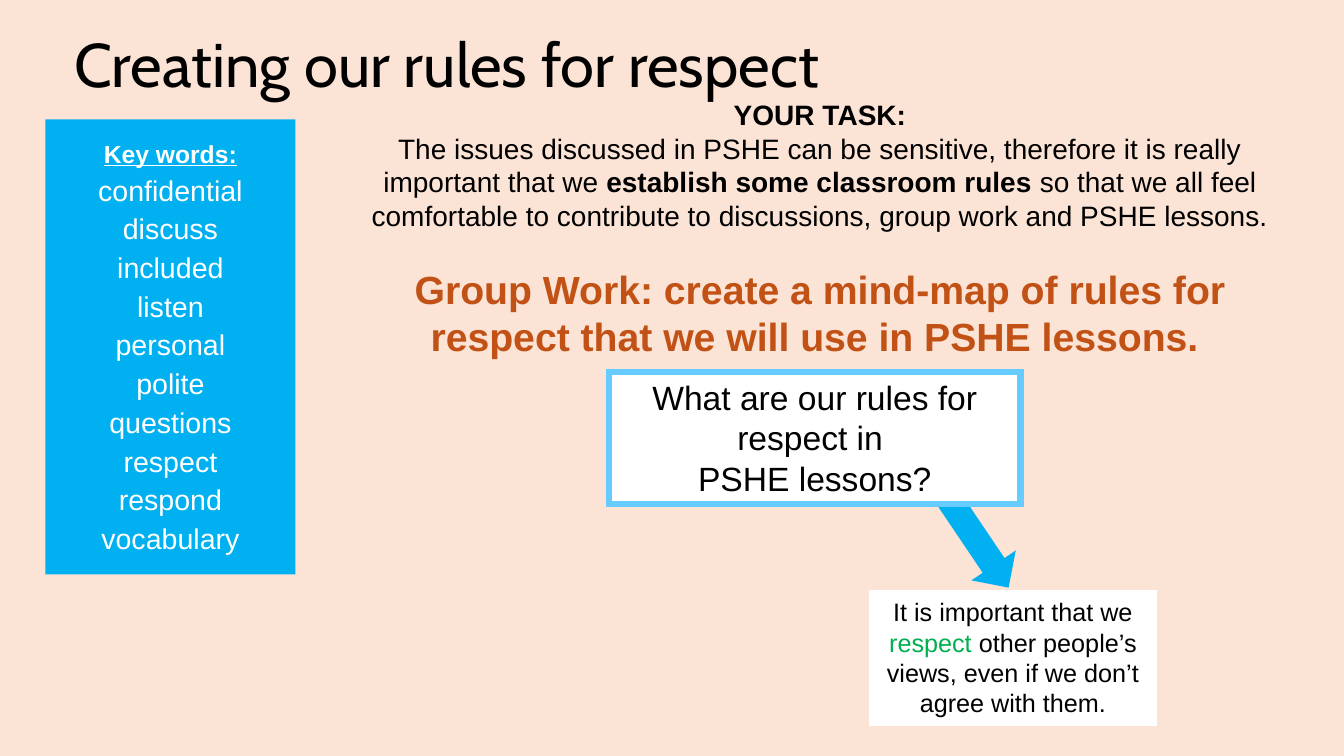
from dataclasses import dataclass

from lxml.etree import SubElement
from pptx import Presentation
from pptx.dml.color import RGBColor as Rgb
from pptx.enum.shapes import MSO_SHAPE as Preset
from pptx.enum.text import MSO_ANCHOR as Anchor, PP_ALIGN as Align
from pptx.oxml.ns import qn
from pptx.shapes.autoshape import Shape
from pptx.slide import Slide
from pptx.text.text import TextFrame
from pptx.util import Pt


@dataclass(frozen=True)
class Theme:
    body_font: str = "Arial"
    title_font: str = "Cabin"
    background: str = "FBE3D6"
    ink: str = "000000"
    paper: str = "FFFFFF"
    blue: str = "00B0F0"
    frame: str = "66CCFF"
    green: str = "00B050"
    orange: str = "C25115"
    title: float = 44
    group_work: float = 28
    prompt: float = 24
    keyword: float = 20.4
    task: float = 20
    answer: float = 18
    heading: float = 17.6


THEME = Theme()


@dataclass(frozen=True)
class Box:
    left: float
    top: float
    width: float
    height: float

    def lengths(self) -> tuple[Pt, Pt, Pt, Pt]:
        return Pt(self.left), Pt(self.top), Pt(self.width), Pt(self.height)


@dataclass(frozen=True)
class Run:
    text: str
    size: float
    color: str = THEME.ink
    bold: bool = False
    underline: bool = False
    font: str = THEME.body_font


@dataclass(frozen=True)
class Line:
    runs: tuple[Run, ...]
    before: float = 0
    spacing: float = 1.0
    align: Align = Align.CENTER


@dataclass(frozen=True)
class Panel:
    box: Box
    fill: str
    lines: tuple[Line, ...] = ()
    border: str | None = None
    border_width: float = 0
    preset: Preset = Preset.RECTANGLE
    rotation: float = 0
    top_inset: float = 3.6


TITLE_BOX = Box(46, -3.6, 828, 104.4)
TITLE = Line((Run("Creating our rules for respect", THEME.title, font=THEME.title_font),),
             spacing=0.9, align=Align.LEFT)

KEYWORDS = ("confidential", "discuss", "included", "listen", "personal",
            "polite", "questions", "respect", "respond", "vocabulary")
KEYWORD_LINES = (
    Line((Run("Key words:", THEME.heading, THEME.paper, bold=True, underline=True),), spacing=0.7),
    *(Line((Run(word, THEME.keyword, THEME.paper),), before=10.5, spacing=0.7) for word in KEYWORDS),
)

ANSWER = Panel(
    Box(622, 422.7, 203, 94.3), THEME.paper, border=THEME.paper, border_width=3,
    lines=(Line((
        Run("It is important that we ", THEME.answer),
        Run("respect ", THEME.answer, THEME.green),
        Run("other people’s views, even if we don’t agree with them.", THEME.answer),
    )),))
ARROW = Panel(Box(643, 360.7, 98.6, 34.6), THEME.blue, border=THEME.blue, border_width=1.5,
              preset=Preset.RIGHT_ARROW, rotation=56)
KEYWORD_PANEL = Panel(Box(32.4, 85.2, 178.6, 325.2), THEME.blue, KEYWORD_LINES, top_inset=19.5)
PROMPT = Panel(
    Box(435, 265.7, 294, 94.3), THEME.paper, border=THEME.frame, border_width=4.5,
    lines=(Line((Run("What are our rules for respect in ", THEME.prompt),)),
           Line((Run("PSHE lessons?", THEME.prompt),))))

TASK_BOX = Box(257, 66.2, 657.4, 196.6)
TASK_LINES = (
    Line((Run("YOUR TASK:", THEME.task, bold=True),)),
    Line((
        Run("The issues discussed in PSHE can be sensitive, therefore it is really "
            "important that we ", THEME.task),
        Run("establish some classroom rules ", THEME.task, bold=True),
        Run("so that we all feel comfortable to contribute to discussions, "
            "group work and PSHE lessons.", THEME.task),
    )),
    Line((Run("Group Work: create a mind-map of rules for respect that we will use "
              "in PSHE lessons. ", THEME.group_work, THEME.orange, bold=True),), before=24),
)


def write_lines(frame: TextFrame, lines: tuple[Line, ...], anchor: Anchor = Anchor.TOP) -> None:
    frame.word_wrap = True
    frame.vertical_anchor = anchor
    for index, line in enumerate(lines):
        paragraph = frame.add_paragraph() if index else frame.paragraphs[0]
        paragraph.alignment = line.align
        paragraph.line_spacing = line.spacing
        paragraph.space_before = Pt(line.before)
        for part in line.runs:
            run = paragraph.add_run()
            run.text = part.text
            font = run.font
            font.name, font.size = part.font, Pt(part.size)
            font.bold, font.underline = part.bold, part.underline
            font.color.rgb = Rgb.from_string(part.color)


def add_panel(slide: Slide, panel: Panel) -> Shape:
    shape = slide.shapes.add_shape(panel.preset, *panel.box.lengths())
    shape.shadow.inherit = False
    shape.rotation = panel.rotation
    shape.fill.solid()
    shape.fill.fore_color.rgb = Rgb.from_string(panel.fill)
    if panel.border:
        shape.line.color.rgb = Rgb.from_string(panel.border)
        shape.line.width = Pt(panel.border_width)
        # Square corners on the outline
        SubElement(shape.line._get_or_add_ln(), qn("a:miter"), lim="800000")
    else:
        shape.line.fill.background()
    if panel.lines:
        shape.text_frame.margin_top = Pt(panel.top_inset)
        write_lines(shape.text_frame, panel.lines)
    return shape


def main() -> None:
    deck = Presentation()
    deck.slide_width, deck.slide_height = Pt(960), Pt(540)
    slide = deck.slides.add_slide(deck.slide_layouts[5])
    slide.background.fill.solid()
    slide.background.fill.fore_color.rgb = Rgb.from_string(THEME.background)

    title = slide.shapes.title
    title.left, title.top, title.width, title.height = TITLE_BOX.lengths()
    write_lines(title.text_frame, (TITLE,), Anchor.MIDDLE)

    for panel in (ANSWER, ARROW, KEYWORD_PANEL, PROMPT):
        add_panel(slide, panel)
    task = slide.shapes.add_textbox(*TASK_BOX.lengths())
    write_lines(task.text_frame, TASK_LINES)
    deck.save("out.pptx")


if __name__ == "__main__":
    main()
